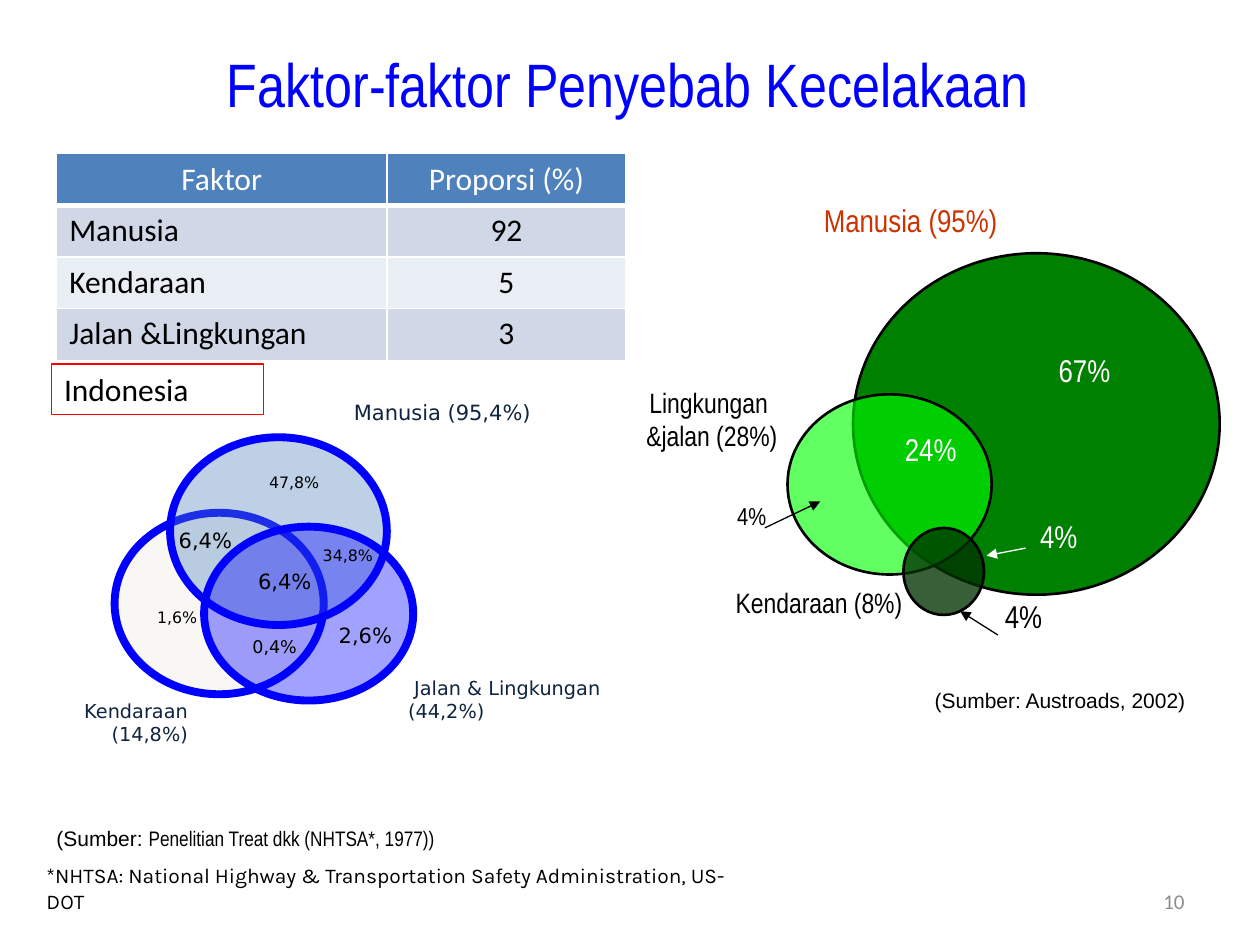
from lxml.etree import SubElement
from pptx import Presentation
from pptx.dml.color import RGBColor
from pptx.enum.shapes import MSO_CONNECTOR, MSO_SHAPE
from pptx.enum.text import MSO_ANCHOR, PP_ALIGN
from pptx.oxml.ns import qn
from pptx.util import Inches, Pt

COLUMNS, ROWS = 100, 75
SLIDE_WIDTH, SLIDE_HEIGHT = Inches(10), Inches(7.5)
COLORS = {
    "white": "FFFFFF", "black": "000000", "blue": "0000FF", "red": "FF0000",
    "navy": "0F243E", "grey": "8C8C8C", "rust": "CC3300", "green": "008000",
    "lime": "00FF00", "forest": "003300", "cream": "EEECE1", "steel": "4F81BD",
    "band": "D0D8E8", "pale": "E9EDF4",
}
LEFT, CENTER, RIGHT = PP_ALIGN.LEFT, PP_ALIGN.CENTER, PP_ALIGN.RIGHT
NARROW, SANS = "Arial Narrow", "DejaVu Sans"

FACTORS = [
    ("Faktor", "Proporsi (%)"),
    ("Manusia", "92"),
    ("Kendaraan", "5"),
    ("Jalan &Lingkungan", "3"),
]
AUSTROADS_CIRCLES = [
    ((67.7, 20.1, 29.1, 27.1), "green", 100),
    ((62.5, 31.3, 16.2, 14.3), "lime", 62),
    ((71.7, 41.9, 6.4, 6.9), "forest", 78),
]
AUSTROADS_NAMES = [
    ("Manusia (95%)", (64.4, 15.5, 20.3, 5.7), 18, "rust", LEFT),
    ("Lingkungan \n&jalan (28%)", (45.3, 30.1, 22.4, 6.7), 16, "black", CENTER),
    ("Kendaraan (8%)", (50.7, 46, 21.9, 7.1), 16, "black", RIGHT),
]
AUSTROADS_SHARES = [
    ("67%", 79.7, 27.4, 18, "white"),
    ("4%", 77.1, 40.5, 18, "white"),
    ("24%", 67.5, 33.6, 18, "white"),
    ("4%", 52.4, 39.3, 14, "black"),
    ("4%", 74.3, 46.9, 18, "black"),
]
AUSTROADS_ARROWS = [
    ((60.7, 41.9), (65.1, 39.8), "black"),
    ((79.2, 50.4), (76.2, 48.5), "black"),
    ((81.4, 43.5), (78.3, 44.1), "white"),
]
TREAT_CIRCLES = [
    ((9.1, 40.7, 16.6, 14.4), "cream"),
    ((13.5, 34.7, 17.2, 14.9), "steel"),
    ((16.2, 41.8, 16.6, 13.8), "blue"),
]
TREAT_SHARES = [
    ("47,8%", (18.8, 37, 9.1, 2.5), 9),
    ("1,6%", (9.9, 47.7, 8.3, 2.5), 9),
    ("2,6%", (25.7, 48.9, 6.6, 5), 12),
    ("6,4%", (13, 41.4, 6.6, 5), 12),
    ("6,4%", (19.3, 44.6, 6.6, 5), 12),
    ("0,4%", (18.5, 50, 6.6, 2.7), 10),
    ("34,8%", (22.7, 42.8, 9.8, 2.5), 9),
]
TREAT_NAMES = [
    ("Manusia (95,4%)", (27.1, 31.2, 17.9, 5.1), 12, LEFT),
    (" Jalan & Lingkungan (44,2%)", (31.4, 53.2, 19.8, 4.7), 11, LEFT),
    (" Kendaraan (14,8%)", (2, 55, 13.9, 4.7), 11, RIGHT),
]


def column(count):
    return round(SLIDE_WIDTH * count / COLUMNS)


def row(count):
    return round(SLIDE_HEIGHT * count / ROWS)


def place(box):
    left, top, width, height = box
    return column(left), row(top), column(width), row(height)


def color(name):
    return RGBColor.from_string(COLORS[name])


def apply_format(target, values):
    for name, value in values.items():
        setattr(target, name, value)


def format_font(font, typeface, size, color_name):
    apply_format(font, {"name": typeface, "size": Pt(size), "bold": False})
    font.color.rgb = color(color_name)


def write_text(frame, text, typeface, size, color_name, align):
    frame.text = text
    for paragraph in frame.paragraphs:
        paragraph.alignment = align
        for run in paragraph.runs:
            format_font(run.font, typeface, size, color_name)


def add_text(slide, text, box, typeface, size, color_name="black", align=LEFT,
             anchor=MSO_ANCHOR.TOP):
    frame = slide.shapes.add_textbox(*place(box)).text_frame
    apply_format(frame, {"word_wrap": True, "vertical_anchor": anchor})
    write_text(frame, text, typeface, size, color_name, align)
    return frame


def add_circle(slide, box, fill, opacity, line, width):
    shape = slide.shapes.add_shape(MSO_SHAPE.OVAL, *place(box))
    shape.shadow.inherit = False
    shape.fill.solid()
    shape.fill.fore_color.rgb = color(fill)
    if opacity < 100:
        tint = shape.fill._xPr.find(qn("a:solidFill"))[0]
        SubElement(tint, qn("a:alpha"), val=str(opacity * 1000))
    shape.line.color.rgb = color(line)
    shape.line.width = Pt(width)


def add_arrow(slide, start, end, color_name):
    arrow = slide.shapes.add_connector(
        MSO_CONNECTOR.STRAIGHT,
        column(start[0]), row(start[1]), column(end[0]), row(end[1]))
    arrow.line.color.rgb = color(color_name)
    arrow.line.width = Pt(0.75)
    SubElement(arrow.line._get_or_add_ln(), qn("a:tailEnd"), type="triangle")
    SubElement(arrow._element.spPr, qn("a:effectLst"))


def add_border(cell, side, width):
    line = SubElement(cell._tc.get_or_add_tcPr(), qn(f"a:ln{side}"), w=str(Pt(width)))
    fill = SubElement(line, qn("a:solidFill"))
    SubElement(fill, qn("a:srgbClr"), val=COLORS["white"])


def add_factor_table(slide):
    box = (4.5, 12.2, 45.2, 16.4)
    table = slide.shapes.add_table(len(FACTORS), 2, *place(box)).table
    for table_column, width in zip(table.columns, (26.2, 19)):
        table_column.width = column(width)
    for index, values in enumerate(FACTORS):
        header = index == 0
        fill = "steel" if header else "band" if index % 2 else "pale"
        for position, value in enumerate(values):
            cell = table.cell(index, position)
            for side in "LRTB":
                add_border(cell, side, 3 if header and side == "B" else 1)
            cell.fill.solid()
            cell.fill.fore_color.rgb = color(fill)
            write_text(cell.text_frame, value, "Calibri", 18,
                       "white" if header else "black",
                       CENTER if header or position else LEFT)


def add_country_box(slide):
    shape = slide.shapes.add_shape(MSO_SHAPE.RECTANGLE, *place((4.1, 28.9, 16.8, 4)))
    shape.shadow.inherit = False
    shape.fill.background()
    shape.line.color.rgb = color("red")
    shape.line.width = Pt(0.75)
    shape.text_frame.vertical_anchor = MSO_ANCHOR.TOP
    write_text(shape.text_frame, "Indonesia", "Calibri", 18, "black", LEFT)


def add_austroads_diagram(slide):
    for box, fill, opacity in AUSTROADS_CIRCLES:
        add_circle(slide, box, fill, opacity, "black", 1.5)
    for text, box, size, color_name, align in AUSTROADS_NAMES:
        add_text(slide, text, box, NARROW, size, color_name, align)
    for text, left, top, size, color_name in AUSTROADS_SHARES:
        add_text(slide, text, (left, top, 9.4, 7.1), NARROW, size, color_name, RIGHT)
    for start, end, color_name in AUSTROADS_ARROWS:
        add_arrow(slide, start, end, color_name)
    add_text(slide, "(Sumber: Austroads, 2002)", (73.2, 54.1, 23.7, 3), "Arial", 12,
             anchor=MSO_ANCHOR.MIDDLE)


def add_treat_diagram(slide):
    for box, fill in TREAT_CIRCLES:
        add_circle(slide, box, fill, 37, "blue", 4.5)
    for text, box, size in TREAT_SHARES:
        add_text(slide, text, box, SANS, size, align=CENTER)
    for text, box, size, align in TREAT_NAMES:
        add_text(slide, text, box, SANS, size, "navy", align)
    source = add_text(slide, "(Sumber: ", (3.5, 65, 44.3, 3), "Arial", 12,
                      anchor=MSO_ANCHOR.MIDDLE)
    run = source.paragraphs[0].add_run()
    run.text = "Penelitian Treat dkk (NHTSA*, 1977))"
    format_font(run.font, NARROW, 12, "black")


def main():
    presentation = Presentation()
    apply_format(presentation, {"slide_width": SLIDE_WIDTH, "slide_height": SLIDE_HEIGHT})
    slide = presentation.slides.add_slide(presentation.slide_layouts[6])
    add_text(slide, "10", (71.7, 69.5, 23.3, 4), "Calibri", 12, "grey", RIGHT,
             MSO_ANCHOR.MIDDLE)
    add_austroads_diagram(slide)
    add_treat_diagram(slide)
    add_text(slide, "Faktor-faktor Penyebab Kecelakaan", (2.6, 3.4, 94.5, 6.3), NARROW,
             35, "blue", CENTER, MSO_ANCHOR.MIDDLE)
    add_text(slide, "*NHTSA: National Highway & Transportation Safety Administration, US-DOT",
             (2.7, 68, 58.1, 3), "Karla", 12)
    add_factor_table(slide)
    add_country_box(slide)
    presentation.save("out.pptx")


if __name__ == "__main__":
    main()
